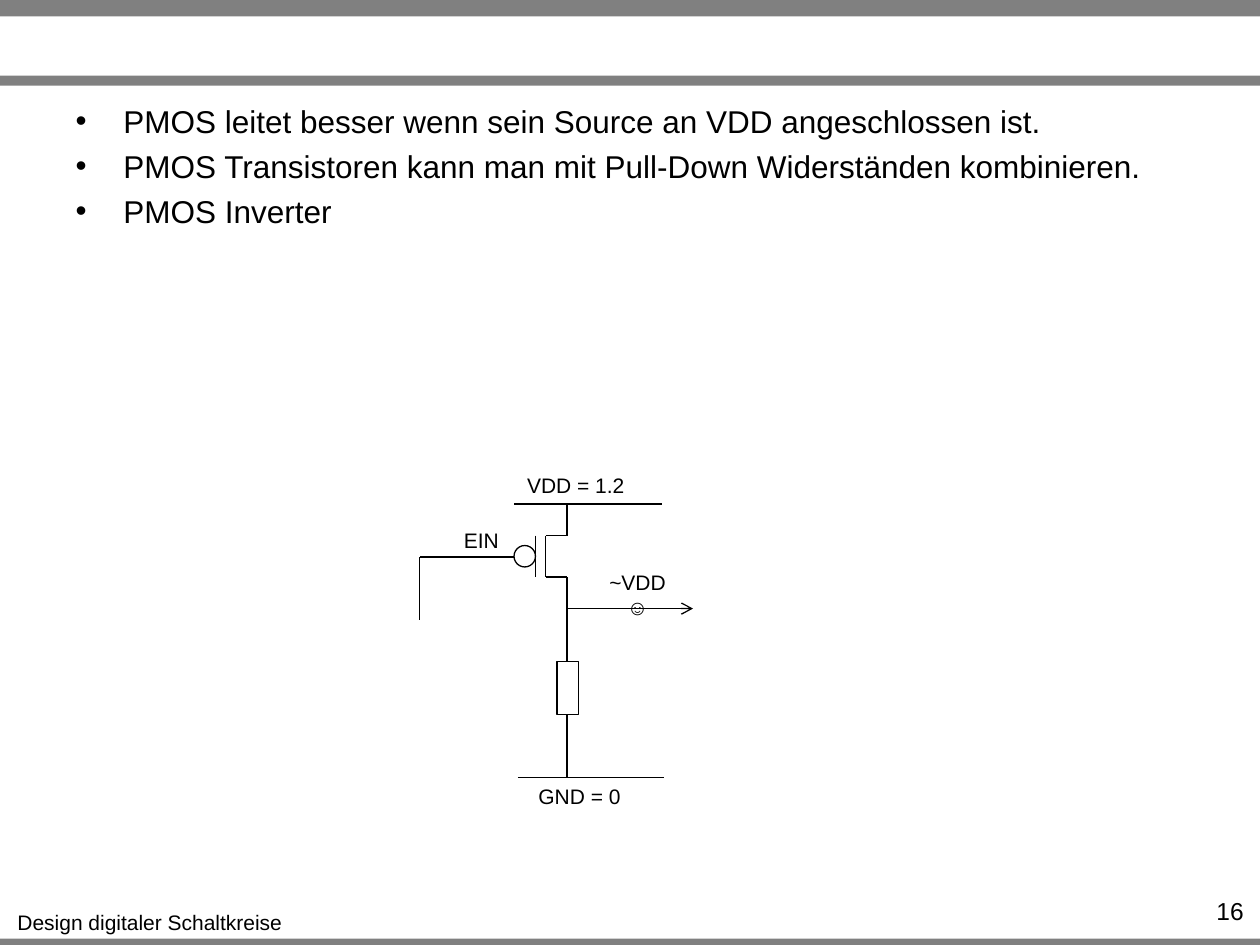
from typing import NamedTuple

from lxml.etree import SubElement
from pptx import Presentation
from pptx.dml.color import RGBColor
from pptx.enum.shapes import MSO_CONNECTOR, MSO_SHAPE
from pptx.enum.text import MSO_ANCHOR, MSO_AUTO_SIZE, PP_ALIGN
from pptx.oxml.ns import qn
from pptx.util import Inches, Pt

COLORS = {"ink": "000000", "bar": "808080", "paper": "FFFFFF"}
FONT = "Arial"


class Wire(NamedTuple):
    x1: float
    y1: float
    x2: float
    y2: float
    arrow: bool = False


class Label(NamedTuple):
    text: str
    x: float
    y: float
    w: float
    h: float = 0.3
    size: int = 12
    align: PP_ALIGN = PP_ALIGN.CENTER
    wrap: bool = False


class Block(NamedTuple):
    kind: MSO_SHAPE
    x: float
    y: float
    w: float
    h: float
    fill: str = ""
    line: str = ""


# Circuit levels and columns
VDD, DRAIN, OUT, GND = 4, 4.58, 4.83, 6.17
SOURCE, GATE = 4.25, 4.42
MAIN, CHAN, PLATE, RING, PIN, INPUT = 4.5, 4.33, 4.25, 4.08, 3.92, 3.33
R_TOP, R_END = 5.25, 5.67

BARS = [
    Block(MSO_SHAPE.RECTANGLE, 0, y, 10, h, "bar")
    for y, h in ((7.45, 0.05), (0, 0.13), (0.6, 0.08))
]
WIRES = [
    Wire(MAIN, SOURCE, CHAN, SOURCE),
    Wire(CHAN, SOURCE, CHAN, DRAIN),
    Wire(PLATE, SOURCE, PLATE, DRAIN),
    Wire(MAIN, DRAIN, CHAN, DRAIN),
    Wire(MAIN, DRAIN, MAIN, OUT),
    Wire(MAIN, VDD, MAIN, SOURCE),
    Wire(RING, GATE, PIN, GATE),
    Wire(4.11, GND, 5.27, GND),
    Wire(4.08, VDD, 5.25, VDD),
    Wire(MAIN, GND, MAIN, R_END),
    Wire(MAIN, OUT, 5.5, OUT, arrow=True),
    Wire(PIN, GATE, INPUT, GATE),
    Wire(MAIN, R_TOP, MAIN, OUT),
    Wire(INPUT, 4.92, INPUT, GATE),
]
PARTS = [
    Block(MSO_SHAPE.OVAL, RING, 4.33, 0.17, 0.17, "paper", "ink"),
    Block(MSO_SHAPE.RECTANGLE, 4.42, R_TOP, 0.17, R_END - R_TOP, line="ink"),
]
LABELS = [
    Label("Design digitaler Schaltkreise", 0.03, 7.17, 2.32),
    Label("16", 9.1, 7.06, 0.87, 0.24, 14, PP_ALIGN.RIGHT, True),
    Label("VDD = 1.2", 4.08, 3.7, 0.98),
    Label("GND = 0", 4.17, 6.17, 0.86),
    Label("~VDD ☺", 4.72, 4.47, 0.68, wrap=True),
    Label("EIN", 3.58, 4.14, 0.48),
]
POINTS = [
    "PMOS leitet besser wenn sein Source an VDD angeschlossen ist.",
    "PMOS Transistoren kann man mit Pull-Down Widerständen kombinieren.",
    "PMOS Inverter",
]


def color(name: str) -> RGBColor:
    return RGBColor.from_string(COLORS[name])


def apply(item, values: dict) -> None:
    for name, value in values.items():
        setattr(item, name, value)


def style(font, size: int) -> None:
    apply(font, {"name": FONT, "size": Pt(size)})
    font.color.rgb = color("ink")


def add_block(slide, block: Block) -> None:
    box = map(Inches, (block.x, block.y, block.w, block.h))
    shape = slide.shapes.add_shape(block.kind, *box)
    shape.shadow.inherit = False
    if block.fill:
        shape.fill.solid()
        shape.fill.fore_color.rgb = color(block.fill)
    else:
        shape.fill.background()
    if block.line:
        shape.line.color.rgb = color(block.line)
        shape.line.width = Pt(0.75)
    else:
        shape.line.fill.background()


def add_wire(slide, wire: Wire) -> None:
    ends = map(Inches, wire[:4])
    line = slide.shapes.add_connector(MSO_CONNECTOR.STRAIGHT, *ends)
    line.line.color.rgb = color("ink")
    line.line.width = Pt(0.75)
    props = line._element.spPr
    if wire.arrow:
        SubElement(props.find(qn("a:ln")), qn("a:tailEnd"), type="arrow")
    SubElement(props, qn("a:effectLst"))


def add_label(slide, label: Label) -> None:
    box = map(Inches, (label.x, label.y, label.w, label.h))
    frame = slide.shapes.add_textbox(*box).text_frame
    frame.word_wrap = label.wrap
    para = frame.paragraphs[0]
    para.alignment = label.align
    run = para.add_run()
    run.text = label.text
    style(run.font, label.size)


def fill_body(body) -> None:
    spots = {"left": 0.5, "top": 0.76, "width": 9, "height": 0.66}
    apply(body, {name: Inches(size) for name, size in spots.items()})
    frame = body.text_frame
    frame.text = "\n".join(POINTS)
    apply(frame, {
        "word_wrap": True,
        "auto_size": MSO_AUTO_SIZE.NONE,
        "vertical_anchor": MSO_ANCHOR.TOP,
    })
    for para in frame.paragraphs:
        para.space_before = Pt(4)
        props = para._p.get_or_add_pPr()
        props.set("marL", str(Inches(0.38)))
        props.set("indent", str(Inches(-0.38)))
        SubElement(props, qn("a:buFont"), typeface=FONT)
        SubElement(props, qn("a:buChar"), char="•")
        style(para.runs[0].font, 18)


def main() -> None:
    deck = Presentation()
    apply(deck, {"slide_width": Inches(10), "slide_height": Inches(7.5)})
    slide = deck.slides.add_slide(deck.slide_layouts[1])
    title = slide.shapes.title._element
    title.getparent().remove(title)
    fill_body(slide.placeholders[1])
    for draw, items in (
        (add_block, BARS),
        (add_wire, WIRES),
        (add_block, PARTS),
        (add_label, LABELS),
    ):
        for item in items:
            draw(slide, item)
    deck.save("out.pptx")


if __name__ == "__main__":
    main()
